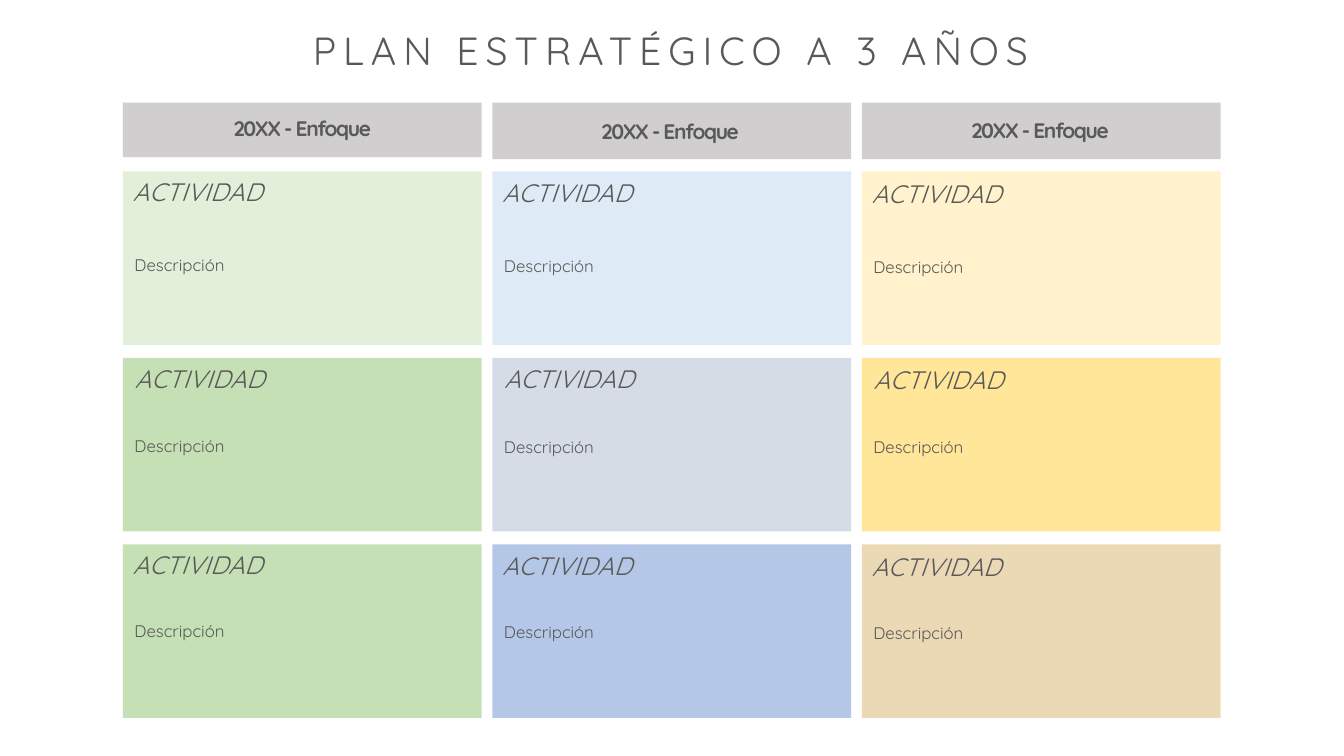
from pptx import Presentation, util as u
from pptx.dml.color import RGBColor
from pptx.enum import shapes, text

GRAY = RGBColor(0x59, 0x59, 0x59)
HEADER_FILL = RGBColor(0xD0, 0xCE, 0xCE)
ACTIVITY_FILLS = [
    [RGBColor(0xE2, 0xF0, 0xD9), RGBColor(0xC5, 0xE0, 0xB4), RGBColor(0xC5, 0xE0, 0xB4)],
    [RGBColor(0xDE, 0xEB, 0xF7), RGBColor(0xD6, 0xDC, 0xE5), RGBColor(0xB4, 0xC7, 0xE7)],
    [RGBColor(0xFF, 0xF2, 0xCC), RGBColor(0xFF, 0xE6, 0x99), RGBColor(0xEB, 0xD9, 0xB6)],
]

TITLE = {"size": u.Pt(28)}
HEADER = {"size": u.Pt(15), "bold": True}
ACTIVITY = {"size": u.Pt(18), "italic": True}
DESCRIPTION = {"size": u.Pt(12)}

GRID_LEFT, COLUMN_STEP, COLUMN_WIDTH = 3.1, 9.31, 9.04
GRID_TOP, ROW_STEP, ROW_HEIGHT = 4.32, 4.7, 4.37
HEADER_TOP = 2.59
HEADER_HEIGHTS = [1.37, 1.42, 1.42]
HEADER_TEXT_TOPS = [2.79, 2.87, 2.84]
HEADER_TEXT_SHIFTS = [0, -0.04, -0.03]
ACTIVITY_SHIFTS = [0, 0.05, 0]
DESCRIPTION_OFFSETS = [1.98, 1.83, 1.8]

presentation = Presentation()
presentation.slide_width = u.Cm(33.87)
presentation.slide_height = u.Cm(19.05)
slide = presentation.slides.add_slide(presentation.slide_layouts[6])


def add_block(left, top, height, color):
    shape = slide.shapes.add_shape(
        shapes.MSO_SHAPE.RECTANGLE, u.Cm(left), u.Cm(top), u.Cm(COLUMN_WIDTH), u.Cm(height))
    shape.shadow.inherit = False
    shape.fill.solid()
    shape.fill.fore_color.rgb = color
    shape.line.fill.background()


def add_label(wording, left, top, width, height, style, alignment=text.PP_ALIGN.LEFT, spacing=0):
    box = slide.shapes.add_textbox(u.Cm(left), u.Cm(top), u.Cm(width), u.Cm(height))
    box.text_frame.word_wrap = True
    box.text_frame.auto_size = text.MSO_AUTO_SIZE.SHAPE_TO_FIT_TEXT
    paragraph = box.text_frame.paragraphs[0]
    paragraph.alignment = alignment
    run = paragraph.add_run()
    run.text = wording
    for name, value in {"name": "Quicksand", **style}.items():
        setattr(run.font, name, value)
    run.font.color.rgb = GRAY
    if spacing:
        run._r.get_or_add_rPr().set("spc", str(spacing * 100))


add_label("PLAN ESTRATÉGICO A 3 AÑOS", 0.46, 0.53, 32.89, 1.45, TITLE, text.PP_ALIGN.CENTER, 5)

for column, fills in enumerate(ACTIVITY_FILLS):
    left = GRID_LEFT + column * COLUMN_STEP
    add_block(left, HEADER_TOP, HEADER_HEIGHTS[column], HEADER_FILL)
    add_label("20XX - Enfoque", left + HEADER_TEXT_SHIFTS[column], HEADER_TEXT_TOPS[column],
              COLUMN_WIDTH, 0.89, HEADER, text.PP_ALIGN.CENTER, -1)
    for row, fill in enumerate(fills):
        top = GRID_TOP + row * ROW_STEP
        text_top = top + column * 0.02
        add_block(left, top, ROW_HEIGHT, fill)
        add_label("ACTIVIDAD", left + ACTIVITY_SHIFTS[row], text_top, 7.8, 1.02, ACTIVITY)
        add_label("Descripción", left + 0.04, text_top + DESCRIPTION_OFFSETS[row],
                  9.02, 0.76, DESCRIPTION)

presentation.save("out.pptx")
